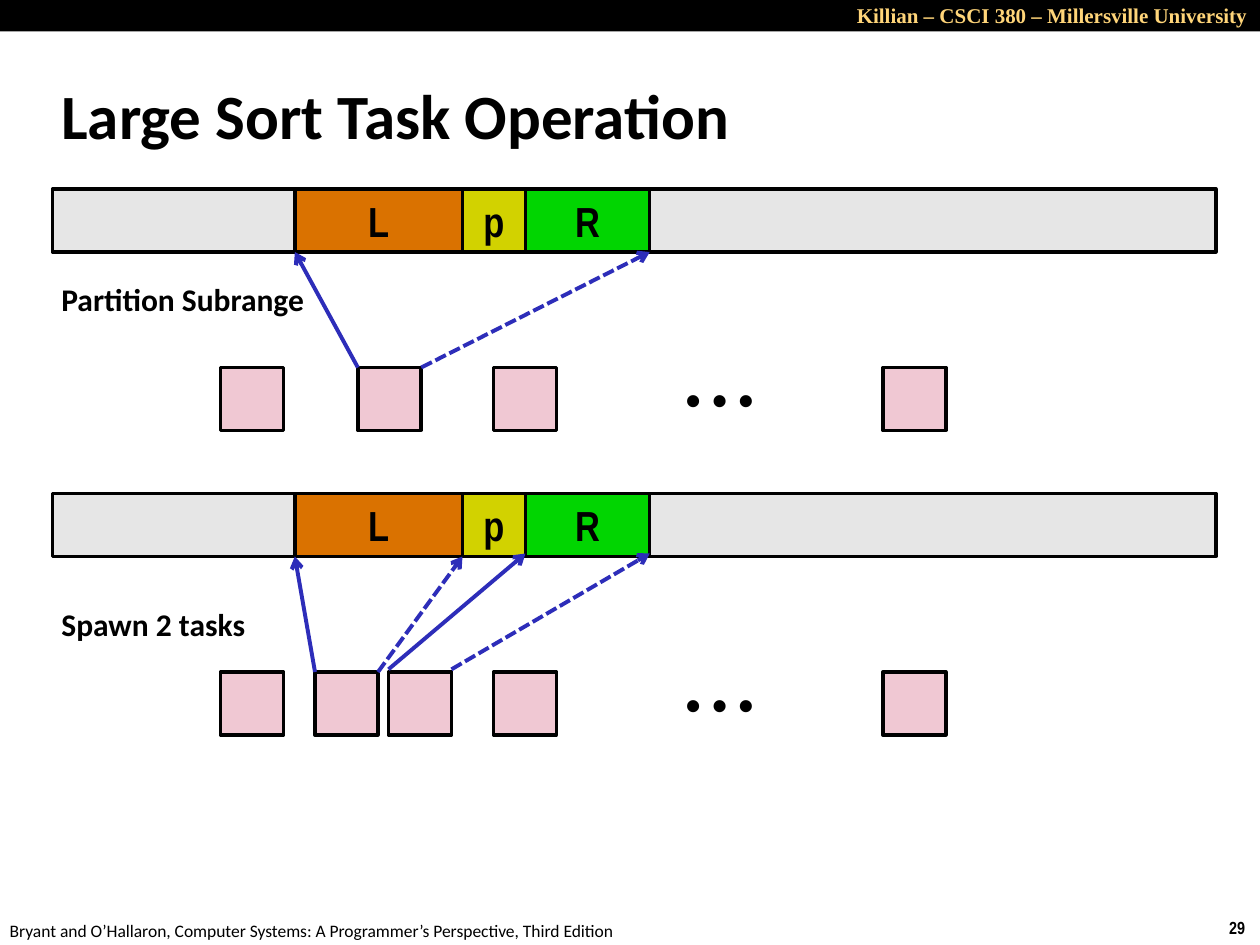
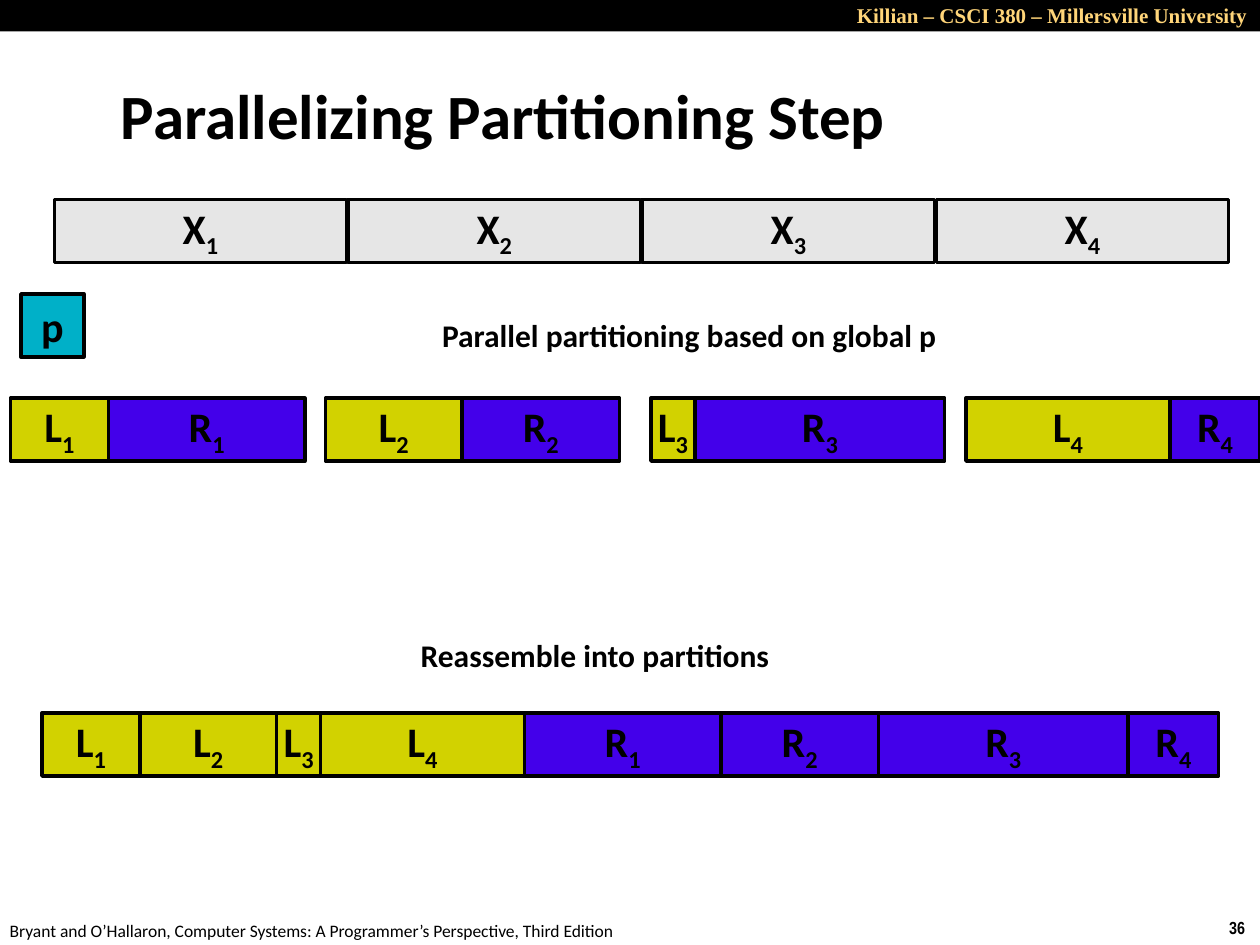
from lxml.etree import SubElement as Sub
from pptx import Presentation
from pptx.dml.color import RGBColor as Rgb
from pptx.enum.dml import MSO_LINE as Dash
from pptx.enum.shapes import MSO_CONNECTOR as Conn, MSO_SHAPE as Geo
from pptx.enum.text import MSO_ANCHOR as Anchor, PP_ALIGN as Align
from pptx.oxml.ns import qn
from pptx.util import Pt

HUES = {
    "black": "000000", "white": "FFFFFF", "gold": "FFD579", "gray": "E6E6E6",
    "pink": "F0C8D3", "orange": "DA7200", "yellow": "D2D200", "green": "01D501",
    "navy": "2D2DB9", "teal": "00B0C8", "violet": "4300EA",
}
HUES = {name: Rgb.from_string(code) for name, code in HUES.items()}
SIDE = 36  # height of every bar, and side of a task square


def write(page, text, at, size=18, font="Calibri", hue="black", bold=True,
          align=Align.LEFT, anchor=Anchor.TOP, wrap=False, sub="", shape=None):
    """Put text in a shape, or in a new text box when none is given."""
    shape = shape or page.shapes.add_textbox(*map(Pt, at))
    frame = shape.text_frame
    frame.word_wrap = wrap
    frame.vertical_anchor = anchor
    para = frame.paragraphs[0]
    para.alignment = align
    for part in filter(None, (text, sub)):
        run = para.add_run()
        run.text = part
        run.font.size, run.font.name, run.font.bold = Pt(size), font, bold
        run.font.color.rgb = HUES[hue]
    if sub:
        run.font._element.set("baseline", "-25000")


def block(page, left, top, width, hue, text="", sub="", font="Calibri"):
    """Draw an outlined block with an optional centred label."""
    at = left, top, width, SIDE
    shape = page.shapes.add_shape(Geo.RECTANGLE, *map(Pt, at))
    shape.shadow.inherit = False
    shape.fill.solid()
    shape.fill.fore_color.rgb = HUES[hue]
    shape.line.color.rgb = HUES["black"]
    shape.line.width = Pt(2)
    if text:
        write(page, text, at, 24, font, align=Align.CENTER,
              anchor=Anchor.MIDDLE, sub=sub, shape=shape)


deck = Presentation()
deck.slide_width, deck.slide_height = Pt(720), Pt(540)

# Shared band, footer, number and title
pages = []
for title, left, num in (("Large Sort Task Operation", 28, "29"),
                         ("Parallelizing Partitioning Step", 62, "36")):
    page = deck.slides.add_slide(deck.slide_layouts[6])
    page.background.fill.solid()
    page.background.fill.fore_color.rgb = HUES["white"]
    band = page.shapes.add_shape(Geo.RECTANGLE, 0, 0, Pt(720), Pt(18))
    band.shadow.inherit = False
    band.fill.solid()
    band.fill.fore_color.rgb = HUES["black"]
    band.line.fill.background()
    write(page, "Killian – CSCI 380 – Millersville University",
          (324, -2, 396, 21.6), 12, "Times New Roman", "gold",
          align=Align.RIGHT, wrap=True)
    write(page, "Bryant and O’Hallaron, Computer Systems: "
          "A Programmer’s Perspective, Third Edition",
          (-1.5, 522, 366, 19.4), 10, bold=False)
    write(page, num, (695.3, 520.6, 24.7, 19.4), 10, "Arial Narrow")
    write(page, title, (left, 35.3, 597.6, 59.8), 36,
          anchor=Anchor.MIDDLE, wrap=True)
    pages.append(page)
sort, split = pages

# Sort task: one array above its row of tasks, before and after spawning
cells = (("L", 168.5, 95.8, "orange"), ("p", 264.3, 36, "yellow"),
         ("R", 300.3, 70.8, "green"))
rows = (
    # top of array, active tasks, note, arrows (x, y, x, y, dashed)
    (108, (204.5,), ("Partition Subrange", 156.2, 156.2),
     ((240.8, 210, 371.3, 144, True), (204.5, 210, 168.5, 144, False))),
    (282, (180, 222), ("Spawn 2 tasks", 342, 121),
     ((216, 384, 264.3, 318, True), (180, 384, 168.5, 318, False),
      (258, 382.5, 371.3, 316.3, True), (222, 382.5, 300.3, 316.3, False))),
)
for top, active, (note, high, wide), arrows in rows:
    low = top + 102
    block(sort, 30, top, 664.8, "gray")
    for left in (126, *active, 282, 504.5):
        block(sort, left, low, SIDE, "pink")
    write(sort, "• • •", (318, low, 186.5, SIDE), 24, "Arial",
          align=Align.CENTER, anchor=Anchor.MIDDLE)
    for name, left, width, hue in cells:
        block(sort, left, top, width, hue, name, font="Arial Narrow")
    for *ends, dashed in arrows:
        arrow = sort.shapes.add_connector(Conn.STRAIGHT, *map(Pt, ends))
        arrow.line.color.rgb = HUES["navy"]
        arrow.line.width = Pt(2.25)
        if dashed:
            arrow.line.dash_style = Dash.SQUARE_DOT
        Sub(arrow.line._get_or_add_ln(), qn("a:tailEnd"), type="arrow")
        Sub(arrow._element.spPr, qn("a:effectLst"))
    write(sort, note, (28, high, wide, 29))

# Parallel step: equal chunks and the global pivot
for i in range(4):
    block(split, 31 + 168 * i, 114, 167, "gray", "X", str(i + 1))
block(split, 12, 168, SIDE, "teal", "p")
write(split, "Parallel partitioning based on global p", (245.5, 177, 301, 29))
write(split, "Reassemble into partitions", (233.3, 360, 217, 29))

# Each chunk splits into L and R; then all L parts come before all R parts
starts = (6, 186, 372, 552)
parts = {"L": ("yellow", (56, 78, 25.2, 116.5)),
         "R": ("violet", (112.3, 90, 142.7, 51.7))}
for i, left in enumerate(starts):
    for name, (hue, widths) in parts.items():
        block(split, left, 227.5, widths[i], hue, name, str(i + 1))
        left += widths[i]
left = 24
for name, (hue, widths) in parts.items():
    for i, width in enumerate(widths):
        block(split, left, 407.5, width, hue, name, str(i + 1))
        left += width

deck.save("out.pptx")
